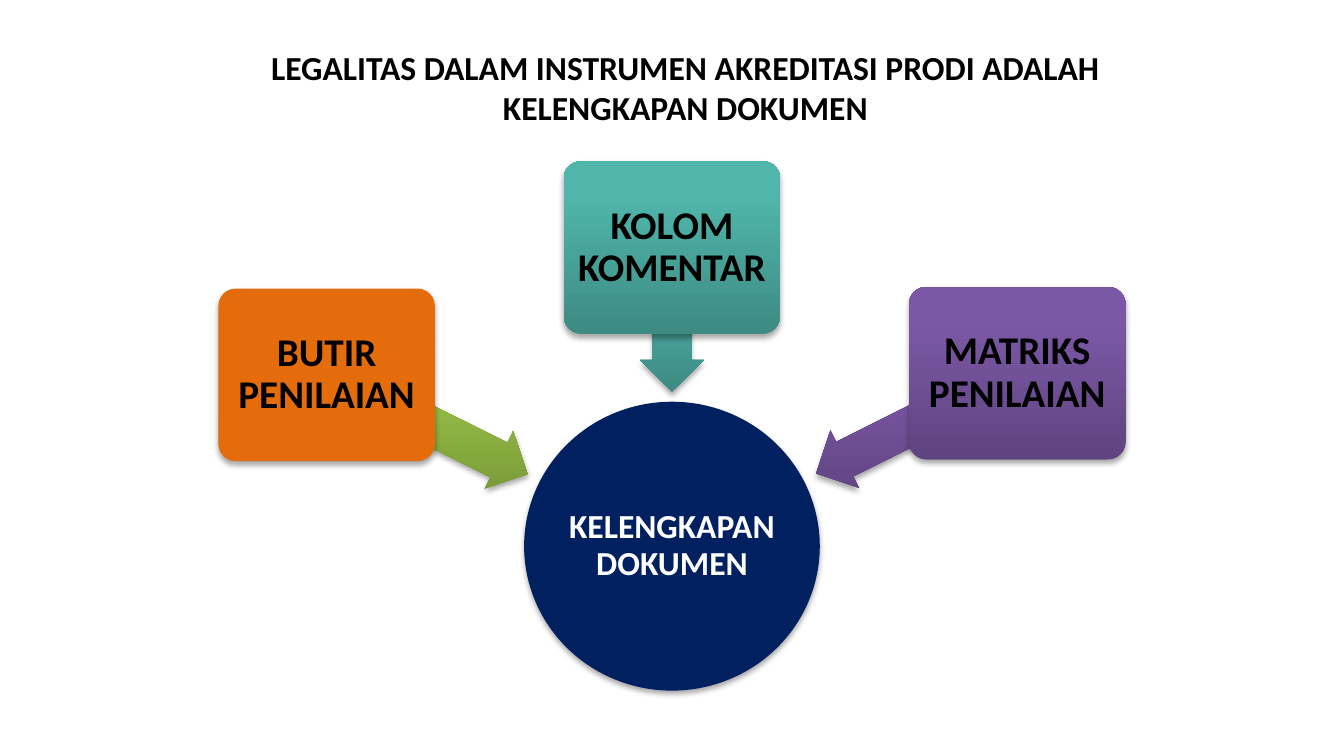
from lxml import etree
from pptx import Presentation
from pptx.dml.color import RGBColor
from pptx.enum import shapes, text
from pptx.oxml import ns
from pptx.util import Pt

FONT = "Calibri"
GREEN = ("779737", "9BC348", "9DC746")
TEAL = ("3D8B83", "50B5AA", "4EB8AC")
PURPLE = ("5F4480", "7B58A6", "7C57A8")
BOX_WIDTH, BOX_HEIGHT = 116, 92.5
ARROW_HEIGHT = 34.5


def add_shape(kind, left, top, width, height, fill):
    """Add a softly shadowed shape; fill is one hex colour or three, bottom to top."""
    shape = presentation.slides[0].shapes.add_shape(
        kind, Pt(left), Pt(top), Pt(width), Pt(height))
    shape.line.fill.background()
    properties = shape._element.spPr
    if isinstance(fill, str):
        shape.fill.solid()
        shape.fill.fore_color.rgb = RGBColor.from_string(fill)
    else:
        stops = "".join(
            f'<a:gs pos="{position}000"><a:srgbClr val="{color}"/></a:gs>'
            for position, color in zip((0, 80, 100), fill))
        properties.insert(2, etree.fromstring(
            f'<a:gradFill {ns.nsdecls("a")} rotWithShape="0"><a:gsLst>{stops}</a:gsLst>'
            '<a:lin ang="16200000" scaled="0"/></a:gradFill>'))
    properties.append(etree.fromstring(
        f'<a:effectLst {ns.nsdecls("a")}>'
        '<a:outerShdw blurRad="39370" dist="22860" dir="5400000" rotWithShape="0">'
        '<a:srgbClr val="000000"><a:alpha val="35000"/></a:srgbClr>'
        '</a:outerShdw></a:effectLst>'))
    return shape


def write_text(shape, words, size, color, margin, line_spacing):
    frame = shape.text_frame
    frame.word_wrap = True
    frame.auto_size = text.MSO_AUTO_SIZE.NONE
    frame.vertical_anchor = text.MSO_ANCHOR.MIDDLE
    frame.margin_left = frame.margin_right = Pt(margin)
    frame.margin_top = frame.margin_bottom = Pt(margin)
    paragraph = frame.paragraphs[0]
    paragraph.alignment = text.PP_ALIGN.CENTER
    paragraph.line_spacing = line_spacing
    run = paragraph.add_run()
    run.text = words
    run.font.name = FONT
    run.font.size = Pt(size)
    run.font.bold = True
    run.font.color.rgb = RGBColor.from_string(color)


presentation = Presentation()
presentation.slide_width = Pt(720)
presentation.slide_height = Pt(405)
slide = presentation.slides.add_slide(presentation.slide_layouts[5])

title = slide.shapes.title
title.left, title.top, title.width, title.height = Pt(132.5), Pt(21.2), Pt(469.5), Pt(51)
write_text(title, "LEGALITAS DALAM INSTRUMEN AKREDITASI PRODI ADALAH KELENGKAPAN DOKUMEN",
           18, "000000", 4, 1.0)

# The label is wider than the text area of an ellipse, so it has its own box
add_shape(shapes.MSO_SHAPE.OVAL, 280.8, 215.2, 158.4, 154.8, "002060")
circle_label = slide.shapes.add_textbox(Pt(300), Pt(237.6), Pt(120), Pt(110))
write_text(circle_label, "KELENGKAPAN DOKUMEN", 18, "FFFFFF", 1, 0.9)

# Box: words, left, top, fill; arrow to the circle: left, top, width, rotation, fill
inputs = [
    ("BUTIR PENILAIAN", 117, 154.6, "E46C0A", 168.5, 210, 120.5, 206.4, GREEN),
    ("KOLOM KOMENTAR", 302, 86.4, TEAL, 321.2, 154, 77.6, 270, TEAL),
    ("MATRIKS PENILAIAN", 487, 153.7, PURPLE, 430.8, 209.5, 120.5, 333.4, PURPLE),
]
for (words, left, top, box_fill,
     arrow_left, arrow_top, arrow_width, rotation, arrow_fill) in inputs:
    arrow = add_shape(shapes.MSO_SHAPE.LEFT_ARROW, arrow_left, arrow_top,
                      arrow_width, ARROW_HEIGHT, arrow_fill)
    arrow.adjustments[0] = 0.6
    arrow.adjustments[1] = 0.5
    arrow.rotation = rotation
    box = add_shape(shapes.MSO_SHAPE.ROUNDED_RECTANGLE, left, top,
                    BOX_WIDTH, BOX_HEIGHT, box_fill)
    box.adjustments[0] = 0.1
    write_text(box, words, 21, "000000", 3, 0.9)

presentation.save("out.pptx")
